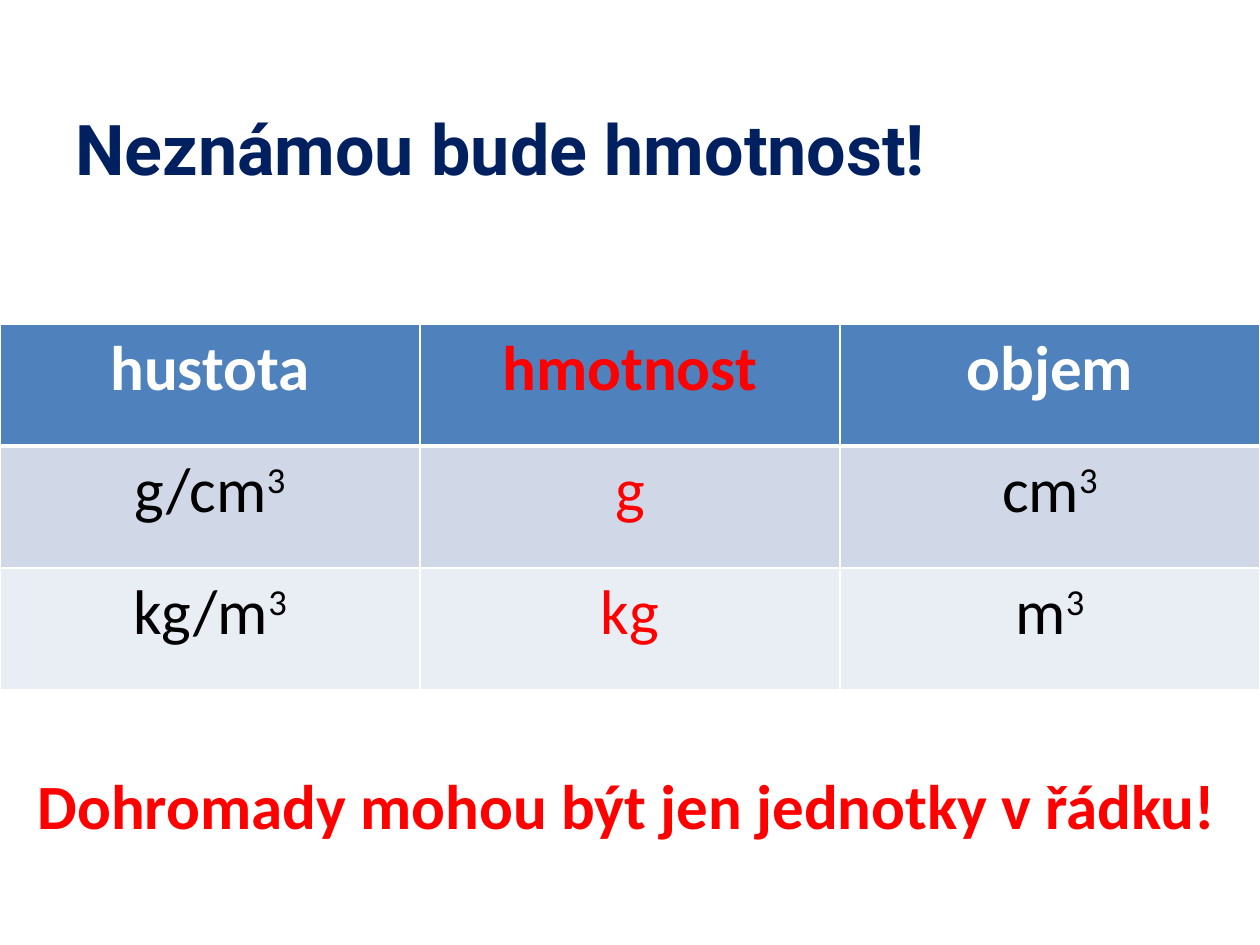
from dataclasses import dataclass

from lxml import etree
from pptx import Presentation
from pptx.dml.color import RGBColor
from pptx.enum.text import MSO_ANCHOR, PP_ALIGN
from pptx.oxml.ns import qn
from pptx.util import Cm, Pt

LEFT, CENTER = PP_ALIGN.LEFT, PP_ALIGN.CENTER
TOP, BOTTOM = MSO_ANCHOR.TOP, MSO_ANCHOR.BOTTOM
BLANK_LAYOUT = 6
NAVY, RED, WHITE, BLACK = "002060", "FF0000", "FFFFFF", "000000"
UNKNOWN_COLUMN = 1
TABLE_WIDTH, ROW_HEIGHT = 25.4, 2.46


@dataclass(frozen=True)
class TableRow:
    """Describe one row: its (text, superscript) cells and its look."""
    cells: tuple[tuple[str, str], ...]
    fill: str
    color: str = BLACK
    bold: bool = False
    top_line: float = 1
    bottom_line: float = 1


ROWS = (
    TableRow((("hustota", ""), ("hmotnost", ""), ("objem", "")), "4F81BD",
             color=WHITE, bold=True, bottom_line=3),
    TableRow((("g/cm", "3"), ("g", ""), ("cm", "3")), "D0D8E8", top_line=3),
    TableRow((("kg/m", "3"), ("kg", ""), ("m", "3")), "E9EDF4"),
)


def rgb(value: str) -> RGBColor:
    """Turn a hex string into a colour."""
    return RGBColor.from_string(value)


def write_text(frame, text: str, *, superscript: str = "", size: float = 36,
               font: str = "Calibri", color: str = BLACK, bold: bool = False,
               align=LEFT) -> None:
    """Write formatted text, with an optional superscript, into a text frame."""
    paragraph = frame.paragraphs[0]
    paragraph.alignment = align
    for content, baseline in ((text, 0), (superscript, 30000)):
        if not content:
            continue
        run = paragraph.add_run()
        run.text = content
        run.font.size = Pt(size)
        run.font.name = font
        run.font.bold = bold
        run.font.color.rgb = rgb(color)
        if baseline:
            run.font._element.set("baseline", str(baseline))


def add_text_box(slide, left: float, top: float, width: float, height: float,
                 text: str, *, anchor=TOP, **text_format) -> None:
    """Add a wrapping text box, placed in centimetres."""
    frame = slide.shapes.add_textbox(Cm(left), Cm(top), Cm(width), Cm(height)).text_frame
    frame.word_wrap = True
    frame.vertical_anchor = anchor
    write_text(frame, text, **text_format)


def add_borders(cell, row: TableRow) -> None:
    """Draw white lines on the four sides of a cell."""
    properties = cell._tc.get_or_add_tcPr()
    widths = {"lnL": 1, "lnR": 1, "lnT": row.top_line, "lnB": row.bottom_line}
    for side, width in widths.items():
        line = etree.SubElement(properties, qn(f"a:{side}"), w=str(Pt(width)))
        fill = etree.SubElement(line, qn("a:solidFill"))
        etree.SubElement(fill, qn("a:srgbClr"), val=WHITE)


def add_units_table(slide, top: float) -> None:
    """Add the full-width table of quantities and their units."""
    shape = slide.shapes.add_table(len(ROWS), len(ROWS[0].cells), Cm(0), Cm(top),
                                   Cm(TABLE_WIDTH), Cm(ROW_HEIGHT * len(ROWS)))
    for row_index, row in enumerate(ROWS):
        for column_index, (text, superscript) in enumerate(row.cells):
            cell = shape.table.cell(row_index, column_index)
            add_borders(cell, row)
            cell.fill.solid()
            cell.fill.fore_color.rgb = rgb(row.fill)
            color = RED if column_index == UNKNOWN_COLUMN else row.color
            write_text(cell.text_frame, text, superscript=superscript, color=color,
                       bold=row.bold, align=CENTER)


def main() -> None:
    """Build and save the slide."""
    presentation = Presentation()
    presentation.slide_width, presentation.slide_height = Cm(25.4), Cm(19.05)
    slide = presentation.slides.add_slide(presentation.slide_layouts[BLANK_LAYOUT])
    add_text_box(slide, 1.27, 0.76, 22.86, 3.18, "Neznámou bude hmotnost!",
                 anchor=BOTTOM, size=40, font="Roboto", color=NAVY, bold=True)
    add_units_table(slide, 6.53)
    add_text_box(slide, 0.51, 15.32, 24.89, 1.8,
                 "Dohromady mohou být jen jednotky v řádku!", color=RED, bold=True)
    presentation.save("out.pptx")


if __name__ == "__main__":
    main()
